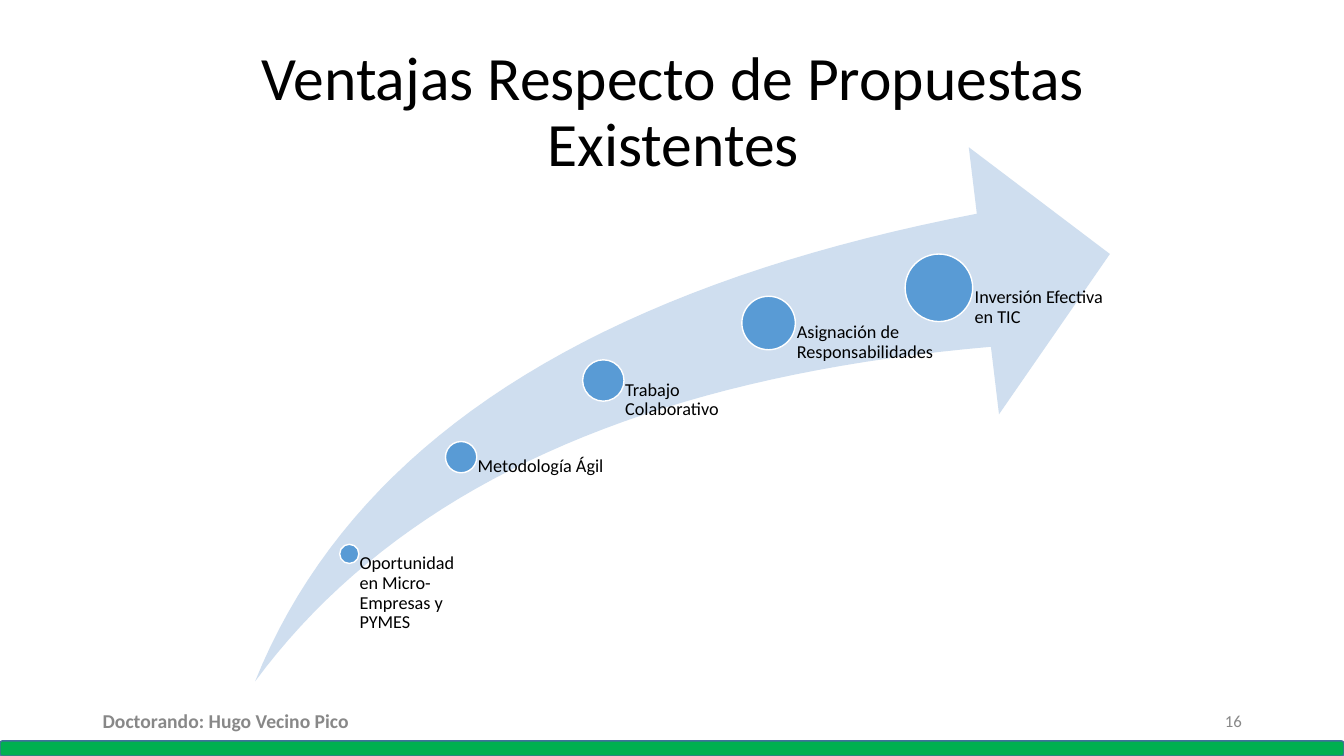
from pptx import Presentation
from pptx import util as u
from pptx.dml.color import RGBColor
from pptx.enum import shapes, text

SHAPE = shapes.MSO_SHAPE
ALIGN = text.PP_ALIGN
ANCHOR = text.MSO_ANCHOR
CURVE_STEPS = 40


def colour(hex_string):
    return RGBColor.from_string(hex_string)


def bezier(start, pull_out, pull_in, end):
    points = []
    for step in range(CURVE_STEPS + 1):
        t = step / CURVE_STEPS
        weights = ((1 - t) ** 3, 3 * t * (1 - t) ** 2, 3 * t * t * (1 - t), t ** 3)
        corners = (start, pull_out, pull_in, end)
        points.append(tuple(sum(w * c[axis] for w, c in zip(weights, corners))
                            for axis in (0, 1)))
    return points


class Deck:
    """Holds the style and the current slide, on a grid of 100 columns by 100 rows."""

    FONT = "Calibri"
    INK, MUTED = "000000", "888888"
    ARROW, DOT, WHITE = "CFDEEF", "599BD5", "FFFFFF"
    GREEN, EDGE = "00B050", "42719B"

    def __init__(self):
        self.presentation = Presentation()
        self.presentation.slide_width = u.Inches(13.333)
        self.presentation.slide_height = u.Inches(7.5)
        layout = self.presentation.slide_layouts[5]
        self.slide = self.presentation.slides.add_slide(layout)

    def col(self, columns):
        return round(self.presentation.slide_width * columns / 100)

    def row(self, rows):
        return round(self.presentation.slide_height * rows / 100)

    def box(self, left, top, width, height):
        return self.col(left), self.row(top), self.col(width), self.row(height)

    def letter(self, frame, wording, size, hue=INK, bold=False, align=ALIGN.LEFT,
               anchor=ANCHOR.MIDDLE, spacing=1.0):
        frame.text = wording
        frame.word_wrap = True
        frame.auto_size = text.MSO_AUTO_SIZE.NONE
        frame.vertical_anchor = anchor
        paragraph = frame.paragraphs[0]
        paragraph.alignment = align
        paragraph.line_spacing = spacing
        font = paragraph.runs[0].font
        font.name, font.size, font.bold = self.FONT, u.Pt(size), bold
        font.color.rgb = colour(hue)

    def title(self, wording, *place):
        heading = self.slide.shapes.title
        heading.left, heading.top, heading.width, heading.height = self.box(*place)
        self.letter(heading.text_frame, wording, 44, align=ALIGN.CENTER, spacing=0.9)

    def note(self, wording, *place, **style):
        footer = self.slide.shapes.add_textbox(*self.box(*place))
        self.letter(footer.text_frame, wording, hue=self.MUTED, **style)

    def paint(self, shape, fill, line=None):
        shape.shadow.inherit = False
        shape.fill.solid()
        shape.fill.fore_color.rgb = colour(fill)
        if line:
            shape.line.color.rgb = colour(line)
            shape.line.width = u.Pt(1)
        else:
            shape.line.fill.background()

    def bar(self, *place):
        band = self.slide.shapes.add_shape(SHAPE.ROUNDED_RECTANGLE, *self.box(*place))
        self.paint(band, self.GREEN, self.EDGE)

    def outline(self, points):
        start, *rest = [(self.col(x), self.row(y)) for x, y in points]
        builder = self.slide.shapes.build_freeform(*start)
        builder.add_line_segments(rest, close=True)
        self.paint(builder.convert_to_shape(), self.ARROW)

    def milestone(self, wording, x, y, diameter, width, floor):
        centre_x, centre_y, size = self.col(x), self.row(y), self.col(diameter)
        dot = self.slide.shapes.add_shape(
            SHAPE.OVAL, centre_x - size // 2, centre_y - size // 2, size, size)
        self.paint(dot, self.DOT, self.WHITE)
        label = self.slide.shapes.add_textbox(*self.box(x, y, width, floor - y))
        frame = label.text_frame
        frame.margin_left = round(size * 0.53)
        frame.margin_top = frame.margin_right = frame.margin_bottom = 0
        self.letter(frame, wording, 13, anchor=ANCHOR.TOP, spacing=0.9)


def main():
    deck = Deck()
    deck.bar(0, 98, 100, 2)
    deck.title("Ventajas Respecto de Propuestas Existentes", 8.93, 5.33, 82.35, 19.33)

    tail = (18.98, 90.13)
    upper_edge = bezier(tail, (26.1, 58.67), (43.95, 38.13), (72.68, 28.27))
    head = [(72.08, 19.47), (82.58, 33.6), (74.33, 54.8)]
    lower_edge = bezier((73.73, 45.87), (47.85, 49.87), (29.63, 64.53), tail)
    deck.outline(upper_edge + head + lower_edge[:-1])

    advantages = [
        ("Oportunidad en Micro-Empresas y PYMES", 25.99, 73.27, 1.43, 8.33),
        ("Metodología Ágil", 34.31, 60.47, 2.33, 10.58),
        ("Trabajo Colaborativo", 44.89, 50.33, 3.08, 12.3),
        ("Asignación de Responsabilidades", 57.19, 42.73, 3.98, 12.75),
        ("Inversión Efectiva en TIC", 69.86, 38.07, 5.03, 12.75),
    ]
    for advantage in advantages:
        deck.milestone(*advantage, floor=tail[1])

    deck.note("Doctorando: Hugo Vecino Pico", 6.9, 92.67, 33.75, 5.33, size=14, bold=True)
    deck.note("16", 70.65, 92.67, 22.5, 5.33, size=12, align=ALIGN.RIGHT)
    deck.presentation.save("out.pptx")


if __name__ == "__main__":
    main()
